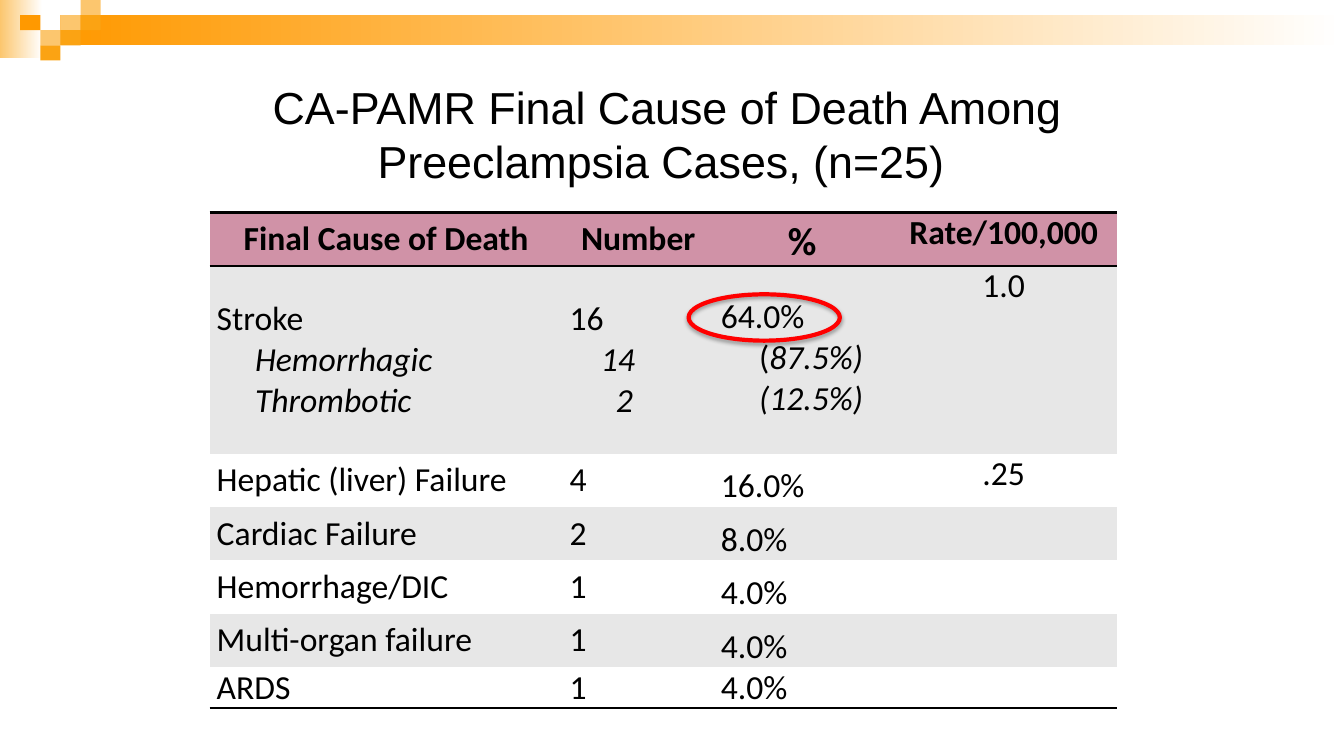
from lxml import etree
from pptx import Presentation
from pptx.dml.color import RGBColor
from pptx.enum.shapes import MSO_SHAPE
from pptx.enum.text import MSO_ANCHOR, PP_ALIGN
from pptx.oxml import parse_xml
from pptx.util import Inches, Pt

RECT, OVAL = MSO_SHAPE.RECTANGLE, MSO_SHAPE.OVAL
TOP, MID, LOW = MSO_ANCHOR.TOP, MSO_ANCHOR.MIDDLE, MSO_ANCHOR.BOTTOM
LEFT, MIDST = PP_ALIGN.LEFT, PP_ALIGN.CENTER
NS = 'xmlns:a="http://schemas.openxmlformats.org/drawingml/2006/main"'
PLAIN = "{2D5ABB26-0587-4C30-8999-92F81FD0307C}"  # no style, no grid

TITLE = "CA-PAMR Final Cause of Death Among Preeclampsia Cases, (n=25) "
HEADS = ["Final Cause of Death", "Number", "%", "Rate/100,000"]
CAUSES = [
    ["Stroke\nHemorrhagic\nThrombotic", "16\n14\n2",
     "64.0%\n(87.5%)\n(12.5%)", "1.0"],
    ["Hepatic (liver) Failure", "4", "16.0%", ".25"],
    ["Cardiac Failure", "2", "8.0%", ""],
    ["Hemorrhage/DIC", "1", "4.0%", ""],
    ["Multi-organ failure", "1", "4.0%", ""],
    ["ARDS", "1", "4.0%", ""],
]
WIDTHS = [3.5, 1.5, 1.75, 2.25]
HEIGHTS = [0.53, 1.86, 0.53, 0.53, 0.53, 0.53, 0.4]
ANCHORS = [MID, MID, LOW, TOP]
INDENTS = [(0.38, 0.38), (0.31, 0.46), (0.38, 0.38)]  # stroke sub-lines

PALE, WARM, DEEP = "FCC66E", "FBA313", "FF9900"
FADES = [(0, 0, 0.42, 0.58, PALE), (0.6, 0.15, 12.73, 0.3, DEEP)]
TILES = [(3, 1, PALE), (4, 0, PALE), (4, 1, WARM), (2, 2, PALE),
         (1, 1, DEEP), (3, 2, WARM), (2, 3, WARM)]  # column, row, colour
TILE_W, TILE_H = 0.2, 0.15


def rgb(code):
    return RGBColor.from_string(code)


def box(kind, x, y, w, h):
    """Add a shape without shadow or line."""
    shape = slide.shapes.add_shape(
        kind, Inches(x), Inches(y), Inches(w), Inches(h))
    shape.shadow.inherit = False
    shape.line.fill.background()
    return shape


def style(run, size, bold=False, italic=False, face="Calibri"):
    font = run.font
    font.name, font.size = face, Pt(size)
    font.bold, font.italic = bold, italic
    font.color.rgb = rgb("000000")


def rule(cell, *sides):
    """Draw black cell borders; name the bottom before the top."""
    for side in sides:
        cell._tc.get_or_add_tcPr().insert(0, parse_xml(
            f'<a:{side} {NS} w="{Pt(2)}"><a:solidFill>'
            f'<a:srgbClr val="000000"/></a:solidFill></a:{side}>'))


def fill_cell(cell, text, row, col):
    cell.fill.solid()
    band = "E7E7E7" if row % 2 else "FFFFFF"
    cell.fill.fore_color.rgb = rgb(band if row else "D092A7")
    cell.margin_left = cell.margin_right = Inches(0.07)
    cell.margin_top = cell.margin_bottom = 0
    cell.vertical_anchor = ANCHORS[col]
    cell.text_frame.text = text
    for i, para in enumerate(cell.text_frame.paragraphs):
        para.alignment = MIDST if row == 0 or col == 3 else LEFT
        if i:
            para._p.get_or_add_pPr().set(
                "marL", str(Inches(INDENTS[col][i - 1])))
        if para.text == "(87.5%)":
            para.runs[0].text = "("
            para.add_run().text = "87.5%)"
        para.font.size = Pt(24)
        for run in para.runs:
            style(run, 28 if text == "%" else 24, row == 0,
                  i > 0 and run.text != "(")


prs = Presentation()
prs.slide_width, prs.slide_height = Inches(13.33), Inches(7.5)
slide = prs.slides.add_slide(prs.slide_layouts[5])

# Corner decoration
for x, y, w, h, tone in FADES:
    fill = box(RECT, x, y, w, h).fill
    fill.gradient()
    fill.gradient_angle = 0
    for stop, code, place in zip(fill.gradient_stops, (tone, "FFFFFF"), (0, 1)):
        stop.color.rgb, stop.position = rgb(code), place
for col, row, tone in TILES:
    tile = box(RECT, col * TILE_W, row * TILE_H, TILE_W, TILE_H)
    tile.fill.solid()
    tile.fill.fore_color.rgb = rgb(tone)

# Title
title = slide.shapes.title
title.left, title.top = Inches(2.58), Inches(0.75)
title.width, title.height = Inches(8.08), Inches(1.15)
title.text_frame.text = TITLE
title.text_frame.vertical_anchor = MID
title.text_frame.paragraphs[0].alignment = MIDST
style(title.text_frame.paragraphs[0].runs[0], 32, face="Arial")

# Table
rows = [HEADS] + CAUSES
table = slide.shapes.add_table(
    len(rows), len(HEADS), Inches(2.08), Inches(2.11),
    Inches(sum(WIDTHS)), Inches(sum(HEIGHTS))).table
table.first_row = table.horz_banding = False
table._tbl.tblPr[0].text = PLAIN
for col, width in enumerate(WIDTHS):
    table.columns[col].width = Inches(width)
for r, line in enumerate(rows):
    table.rows[r].height = Inches(HEIGHTS[r])
    for c, text in enumerate(line):
        fill_cell(table.cell(r, c), text, r, c)
for c in range(len(HEADS)):
    rule(table.cell(0, c), "lnB", "lnT")
    rule(table.cell(len(CAUSES), c), "lnB")
table.cell(1, 2).margin_bottom = Inches(0.34)

# Ring around the stroke share
ring = box(OVAL, 6.83, 2.92, 1.5, 0.46)
ring.fill.background()
ring.line.color.rgb = rgb("FF0000")
ring.line.width = Pt(3)
glow = ring._element.spPr.find("{*}effectLst")
glow.append(etree.fromstring(
    f'<a:outerShdw {NS} blurRad="{Pt(3.1)}" dist="{Pt(1.8)}" dir="5400000" '
    'rotWithShape="0"><a:srgbClr val="000000"><a:alpha val="35000"/>'
    '</a:srgbClr></a:outerShdw>'))

prs.save("out.pptx")
